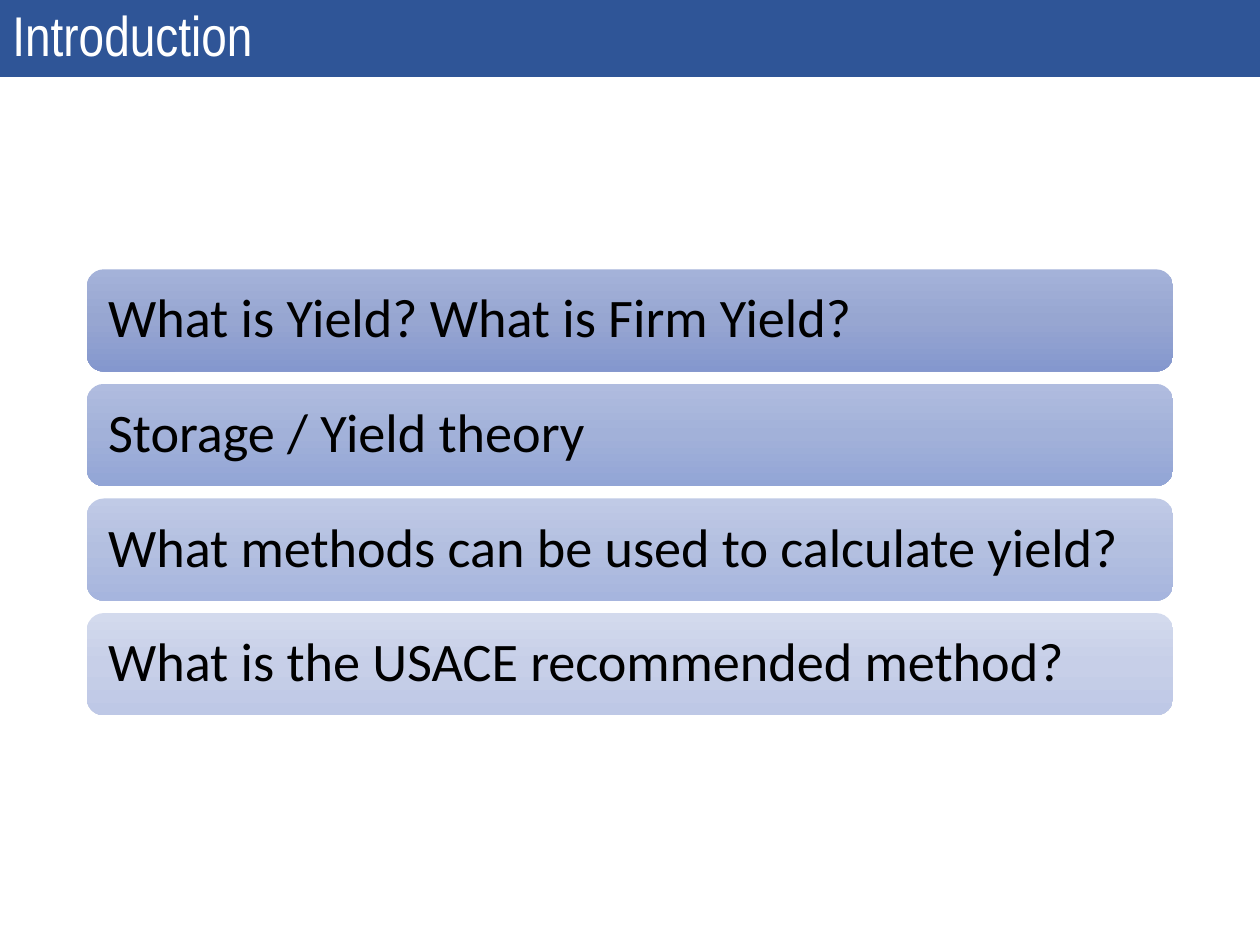
from copy import deepcopy
from dataclasses import dataclass

from pptx import Presentation
from pptx.dml.color import RGBColor
from pptx.enum.shapes import MSO_SHAPE
from pptx.enum.text import MSO_ANCHOR, PP_ALIGN
from pptx.oxml.ns import qn
from pptx.util import Cm, Pt

RECT = MSO_SHAPE.RECTANGLE
ROUND = MSO_SHAPE.ROUNDED_RECTANGLE
MIDDLE = MSO_ANCHOR.MIDDLE
LEFT = PP_ALIGN.LEFT


@dataclass(frozen=True)
class Theme:
    """Hold the colours, fonts and type sizes."""
    bar: str = "2F5597"
    light: str = "FFFFFF"
    dark: str = "000000"
    head_font: str = "Arial Narrow"
    card_font: str = "Calibri"
    head_size: int = 32
    card_size: int = 31
    fades: tuple = (
        ("A4B2D9", "97A6D1", "8497CE"),
        ("B0BCDF", "A2B1D9", "92A5D6"),
        ("C0CAE6", "B3BFE0", "A6B5DE"),
        ("D3DAED", "C7CFE8", "BEC8E6"),
    )


THEME = Theme()
TOPICS = (
    "What is Yield? What is Firm Yield?",
    "Storage / Yield theory",
    "What methods can be used to calculate yield?",
    "What is the USACE recommended method?",
)


def add_box(slide, kind, left, top, width, height):
    """Add a shape without line or shadow, placed in centimetres."""
    box = slide.shapes.add_shape(kind, Cm(left), Cm(top), Cm(width), Cm(height))
    box.shadow.inherit = False
    box.line.fill.background()
    return box


def set_text(box, text, font, size, color):
    """Write one left-aligned line in the middle of a shape."""
    frame = box.text_frame
    frame.text = text
    frame.word_wrap = True
    frame.vertical_anchor = MIDDLE
    line = frame.paragraphs[0]
    line.alignment = LEFT
    line.line_spacing = 0.9
    style = line.runs[0].font
    style.name, style.size = font, Pt(size)
    style.color.rgb = RGBColor.from_string(color)


def set_fade(box, colors):
    """Fill a shape from top to bottom with evenly spaced colours."""
    fill = box.fill
    fill.gradient()
    fill.gradient_angle = 270
    stops = box.element.spPr.find(qn("a:gradFill")).find(qn("a:gsLst"))
    while len(stops) < len(colors):
        stops.insert(1, deepcopy(stops[0]))
    for i, (stop, color) in enumerate(zip(fill.gradient_stops, colors)):
        stop.position = i / (len(colors) - 1)
        stop.color.rgb = RGBColor.from_string(color)


def add_head(slide, text):
    """Add the title bar across the top."""
    bar = add_box(slide, RECT, 0, 0, 25.4, 1.55)
    bar.fill.solid()
    bar.fill.fore_color.rgb = RGBColor.from_string(THEME.bar)
    set_text(bar, text, THEME.head_font, THEME.head_size, THEME.light)


def add_card(slide, top, text, colors):
    """Add one rounded topic card."""
    card = add_box(slide, ROUND, 1.75, top, 21.9, 2.06)
    set_fade(card, colors)
    set_text(card, text, THEME.card_font, THEME.card_size, THEME.dark)
    frame = card.text_frame
    frame.margin_left = frame.margin_right = Cm(0.33)
    frame.margin_top = frame.margin_bottom = Cm(0.33)


def main():
    """Build and save the slide."""
    deck = Presentation()
    deck.slide_width, deck.slide_height = Cm(25.4), Cm(19.05)
    slide = deck.slides.add_slide(deck.slide_layouts[6])
    add_head(slide, "Introduction")
    for i, (text, colors) in enumerate(zip(TOPICS, THEME.fades)):
        add_card(slide, 5.43 + i * 2.31, text, colors)
    deck.save("out.pptx")


if __name__ == "__main__":
    main()
